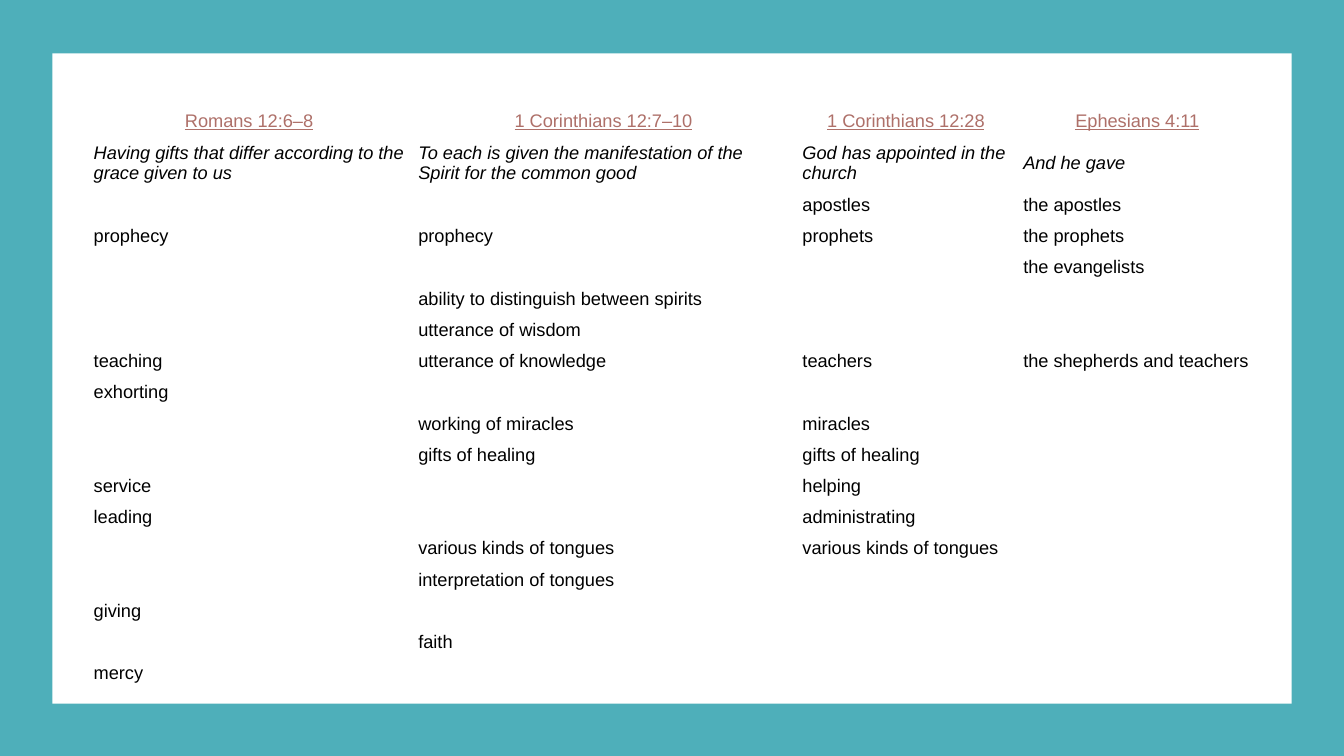
import dataclasses
import pptx
import pptx.dml.color
import pptx.enum.shapes
import pptx.enum.text
import pptx.util

Inches = pptx.util.Inches


@dataclasses.dataclass(frozen=True)
class Theme:
    teal: str = "4EAFBA"
    white: str = "FFFFFF"
    rose: str = "AE7069"
    black: str = "000000"
    face: str = "Arial"
    size: float = 13


THEME = Theme()
WIDTHS = (3.22, 3.81, 2.19, 2.4)
HEIGHTS = (0.35, 0.31, 0.52) + (0.31,) * 16
HEAD, LEAD = 1, 2
GIFTS = (
    ("", "", "", ""),
    ("Romans 12:6–8", "1 Corinthians 12:7–10", "1 Corinthians 12:28", "Ephesians 4:11"),
    (
        "Having gifts that differ according to the grace given to us",
        "To each is given the manifestation of the Spirit for the common good",
        "God has appointed in the church",
        "And he gave",
    ),
    ("", "", "apostles", "the apostles"),
    ("prophecy", "prophecy", "prophets", "the prophets"),
    ("", "", "", "the evangelists"),
    ("", "ability to distinguish between spirits", "", ""),
    ("", "utterance of wisdom", "", ""),
    ("teaching", "utterance of knowledge", "teachers", "the shepherds and teachers"),
    ("exhorting", "", "", ""),
    ("", "working of miracles", "miracles", ""),
    ("", "gifts of healing", "gifts of healing", ""),
    ("service", "", "helping", ""),
    ("leading", "", "administrating", ""),
    ("", "various kinds of tongues", "various kinds of tongues", ""),
    ("", "interpretation of tongues", "", ""),
    ("giving", "", "", ""),
    ("", "faith", "", ""),
    ("mercy", "", "", ""),
)


def color(code):
    return pptx.dml.color.RGBColor.from_string(code)


def panel(slide, box, code):
    shape = slide.shapes.add_shape(
        pptx.enum.shapes.MSO_SHAPE.RECTANGLE, *map(Inches, box)
    )
    shape.shadow.inherit = False
    shape.fill.solid()
    shape.fill.fore_color.rgb = color(code)
    shape.line.fill.background()


def write(cell, text, row):
    cell.fill.solid()
    cell.fill.fore_color.rgb = color(THEME.white)
    cell.vertical_anchor = pptx.enum.text.MSO_ANCHOR.MIDDLE
    cell.margin_left = cell.margin_right = Inches(0.07)
    cell.margin_top = cell.margin_bottom = Inches(0.03 if text else 0)
    para = cell.text_frame.paragraphs[0]
    para.text = text
    font = para.font
    font.name = THEME.face
    font.size = pptx.util.Pt(THEME.size)
    font.color.rgb = color(THEME.rose if row == HEAD else THEME.black)
    font.underline = row == HEAD
    font.italic = row == LEAD
    if row == HEAD:
        para.alignment = pptx.enum.text.PP_ALIGN.CENTER


def chart(slide, box):
    frame = slide.shapes.add_table(len(GIFTS), len(WIDTHS), *map(Inches, box))
    table = frame.table
    table.first_row = False
    table.horz_banding = False
    for col, width in zip(table.columns, WIDTHS):
        col.width = Inches(width)
    for row, height in zip(table.rows, HEIGHTS):
        row.height = Inches(height)
    for row, texts in enumerate(GIFTS):
        for col, text in enumerate(texts):
            write(table.cell(row, col), text, row)


def build(slide, width, height):
    panel(slide, (0, 0, width, height), THEME.teal)
    left, top = 0.52, 0.53
    panel(slide, (left, top, width - 2 * left, 6.45), THEME.white)
    chart(slide, (left + 0.34, top + 0.17, sum(WIDTHS), sum(HEIGHTS)))


def main():
    deck = pptx.Presentation()
    width, height = 13.33, 7.5
    deck.slide_width = Inches(width)
    deck.slide_height = Inches(height)
    build(deck.slides.add_slide(deck.slide_layouts[6]), width, height)
    deck.save("out.pptx")


if __name__ == "__main__":
    main()
